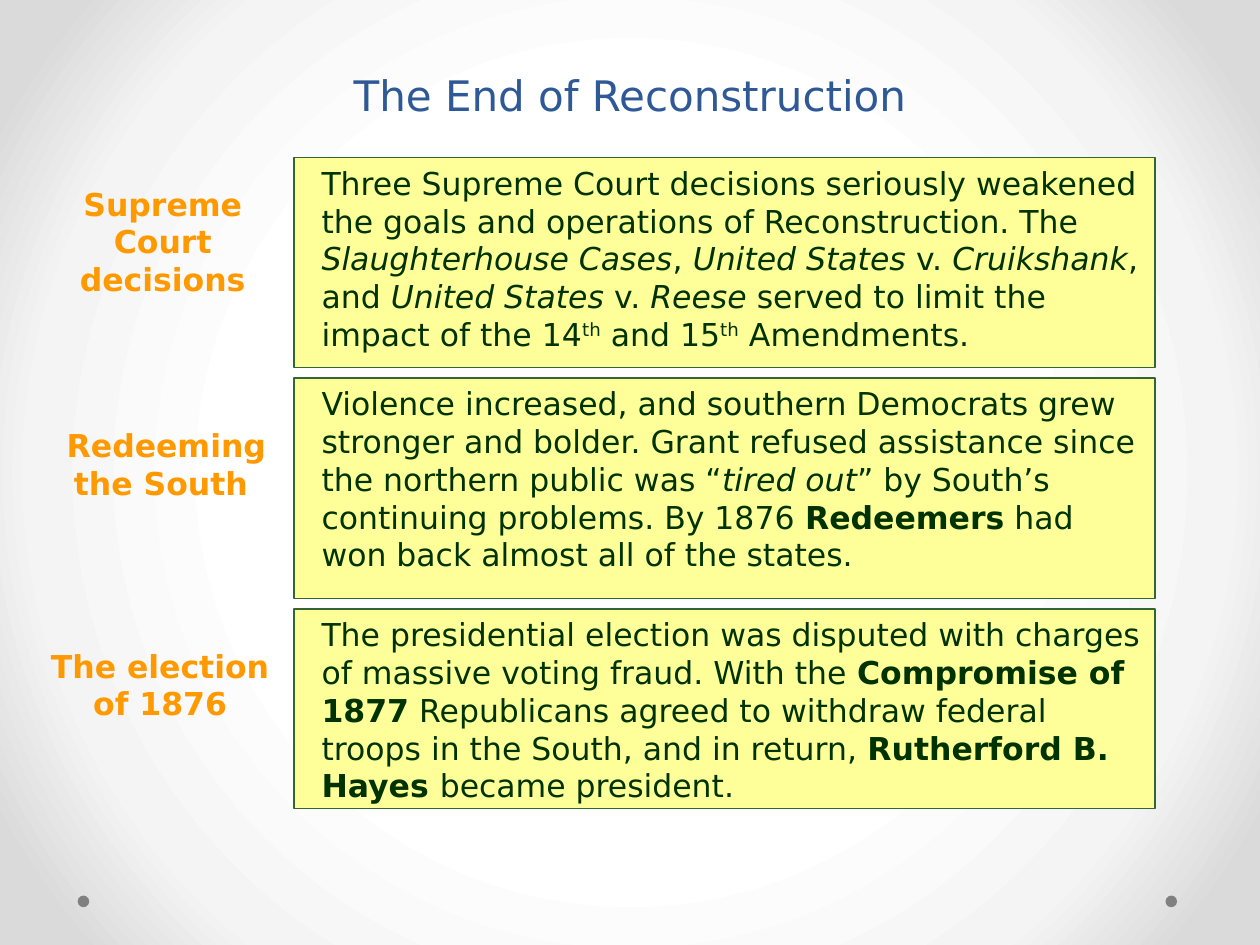
from lxml import etree
from pptx import Presentation
from pptx import util as u
from pptx.dml.color import RGBColor
from pptx.enum import shapes, text
from pptx.oxml import ns

FONT = "DejaVu Sans"
BLUE = RGBColor(0x2F, 0x58, 0x97)
ORANGE = RGBColor(0xFF, 0x99, 0x00)
DARK_GREEN = RGBColor(0x00, 0x33, 0x00)
BORDER_GREEN = RGBColor(0x33, 0x66, 0x33)
YELLOW = RGBColor(0xFF, 0xFF, 0x99)
GRAY = RGBColor(0x80, 0x80, 0x80)
BACKGROUND_STOPS = [
    (50, RGBColor(0xFF, 0xFF, 0xFF)),
    (76, RGBColor(0xF4, 0xF4, 0xF4)),
    (92, RGBColor(0xDA, 0xDA, 0xDA)),
]

presentation = Presentation()
presentation.slide_width = u.Inches(10)
presentation.slide_height = u.Inches(7.5)
slide = presentation.slides.add_slide(presentation.slide_layouts[6])
CELL = presentation.slide_width / 120


def grid(*cells):
    return [u.Emu(round(cell * CELL)) for cell in cells]


def write(shape, runs, size, color, anchor, alignment):
    frame = shape.text_frame
    frame.word_wrap = True
    frame.vertical_anchor = anchor
    paragraph = frame.paragraphs[0]
    paragraph.alignment = alignment
    for content, style in runs:
        run = paragraph.add_run()
        run.text = content
        run.font.color.rgb = color
        formats = {"name": FONT, "size": u.Pt(size),
                   "bold": style == "bold", "italic": style == "italic"}
        for name, value in formats.items():
            setattr(run.font, name, value)
        if style == "superscript":
            run._r.get_or_add_rPr().set("baseline", "30000")
    return paragraph


fill = slide.background.fill
fill.gradient()
gradient = slide.element.find(".//" + ns.qn("a:gradFill"))
for child in list(gradient):
    gradient.remove(child)
stops = etree.SubElement(gradient, ns.qn("a:gsLst"))
for position, color in BACKGROUND_STOPS:
    stop = etree.SubElement(stops, ns.qn("a:gs"), pos=str(position * 1000))
    etree.SubElement(stop, ns.qn("a:srgbClr"), val=str(color))
circle = etree.SubElement(gradient, ns.qn("a:path"), path="circle")
etree.SubElement(circle, ns.qn("a:fillToRect"), l="50000", t="50000", r="50000", b="50000")

for left in (7.4, 111):
    dot = slide.shapes.add_shape(shapes.MSO_SHAPE.OVAL, *grid(left, 85.3, 1.1, 1.1))
    dot.shadow.inherit = False
    dot.fill.solid()
    dot.fill.fore_color.rgb = GRAY
    dot.line.fill.background()

title = slide.shapes.add_textbox(*grid(7, 6, 106, 6))
heading = write(title, [("The End of Reconstruction", None)], 24, BLUE,
                text.MSO_ANCHOR.BOTTOM, text.PP_ALIGN.CENTER)
heading.line_spacing = u.Pt(58)

topics = [
    ("Supreme Court decisions", (3.1, 17, 24.8, 12), (15, 20), [
        ("Three Supreme Court decisions seriously weakened the goals and "
         "operations of Reconstruction. The ", None),
        ("Slaughterhouse Cases", "italic"), (", ", None),
        ("United States ", "italic"), ("v.", None), (" Cruikshank", "italic"),
        (", and ", None), ("United States", "italic"), (" v. ", None),
        ("Reese", "italic"), (" served to limit the impact of the 14", None),
        ("th", "superscript"), (" and 15", None), ("th", "superscript"),
        (" Amendments.", None),
    ]),
    ("Redeeming the South ", (3.6, 40, 24.5, 8.4), (36, 21), [
        ("Violence increased, and southern Democrats grew stronger and bolder. "
         "Grant refused assistance since the northern public was “", None),
        ("tired out", "italic"),
        ("” by South’s continuing problems. By 1876 ", None),
        ("Redeemers", "bold"), (" had won back almost all of the states.", None),
    ]),
    ("The election of 1876", (3.5, 61, 23.5, 8.4), (58, 19), [
        ("The presidential election was disputed with charges of massive "
         "voting fraud. With the ", None),
        ("Compromise of 1877", "bold"),
        (" Republicans agreed to withdraw federal troops in the South, "
         "and in return, ", None),
        ("Rutherford B. Hayes ", "bold"), ("became president.", None),
    ]),
]

for label, label_cells, (top, height), runs in topics:
    panel = slide.shapes.add_shape(shapes.MSO_SHAPE.RECTANGLE, *grid(28, top, 82, height))
    panel.shadow.inherit = False
    panel.fill.solid()
    panel.fill.fore_color.rgb = YELLOW
    panel.line.color.rgb = BORDER_GREEN
    panel.line.width = u.Pt(0.75)
    body = write(panel, runs, 18, DARK_GREEN, text.MSO_ANCHOR.TOP, text.PP_ALIGN.LEFT)
    body._p.get_or_add_pPr().set("marL", str(u.Inches(0.12)))
    caption = slide.shapes.add_textbox(*grid(*label_cells))
    write(caption, [(label, "bold")], 18, ORANGE, text.MSO_ANCHOR.TOP, text.PP_ALIGN.CENTER)

presentation.save("out.pptx")
